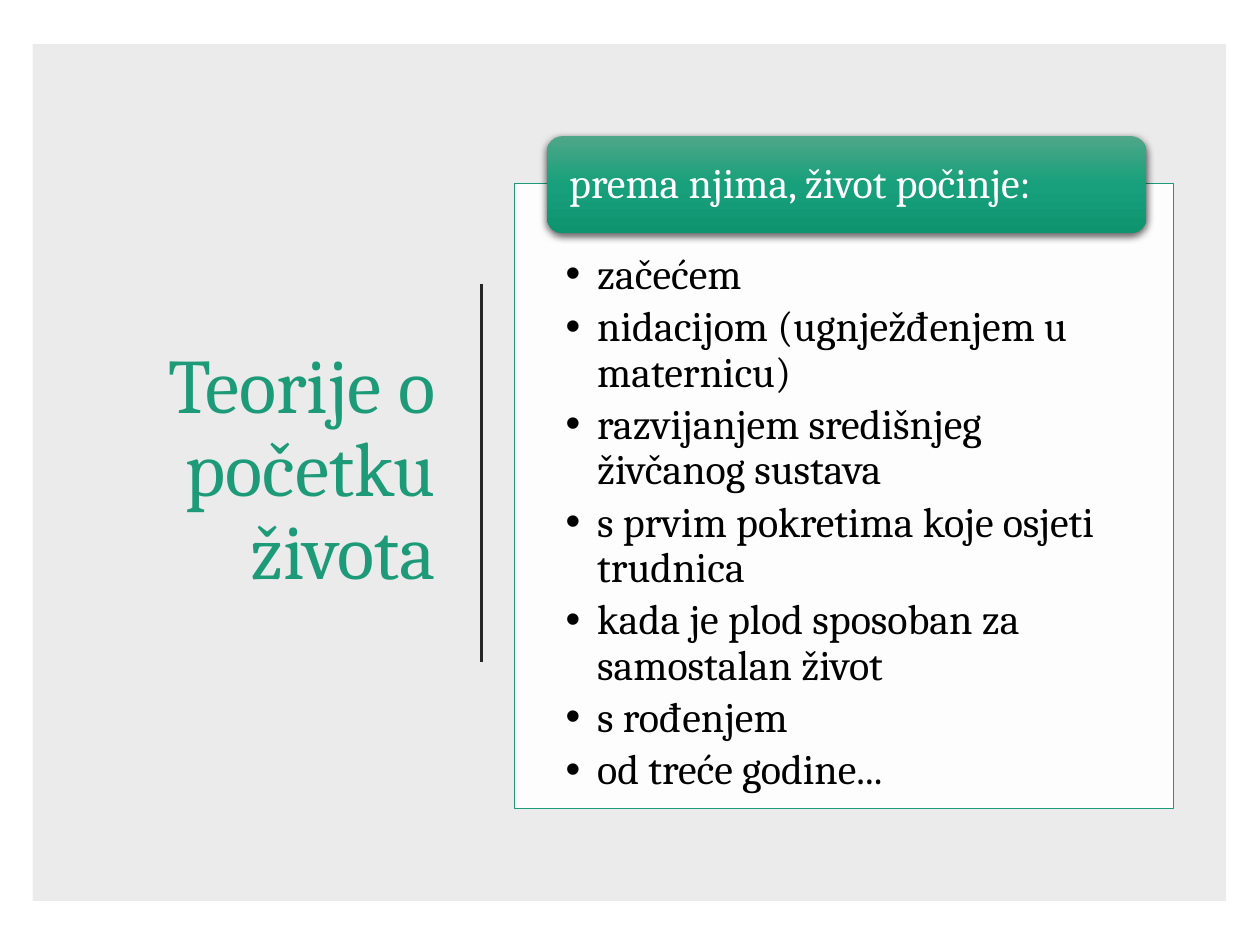
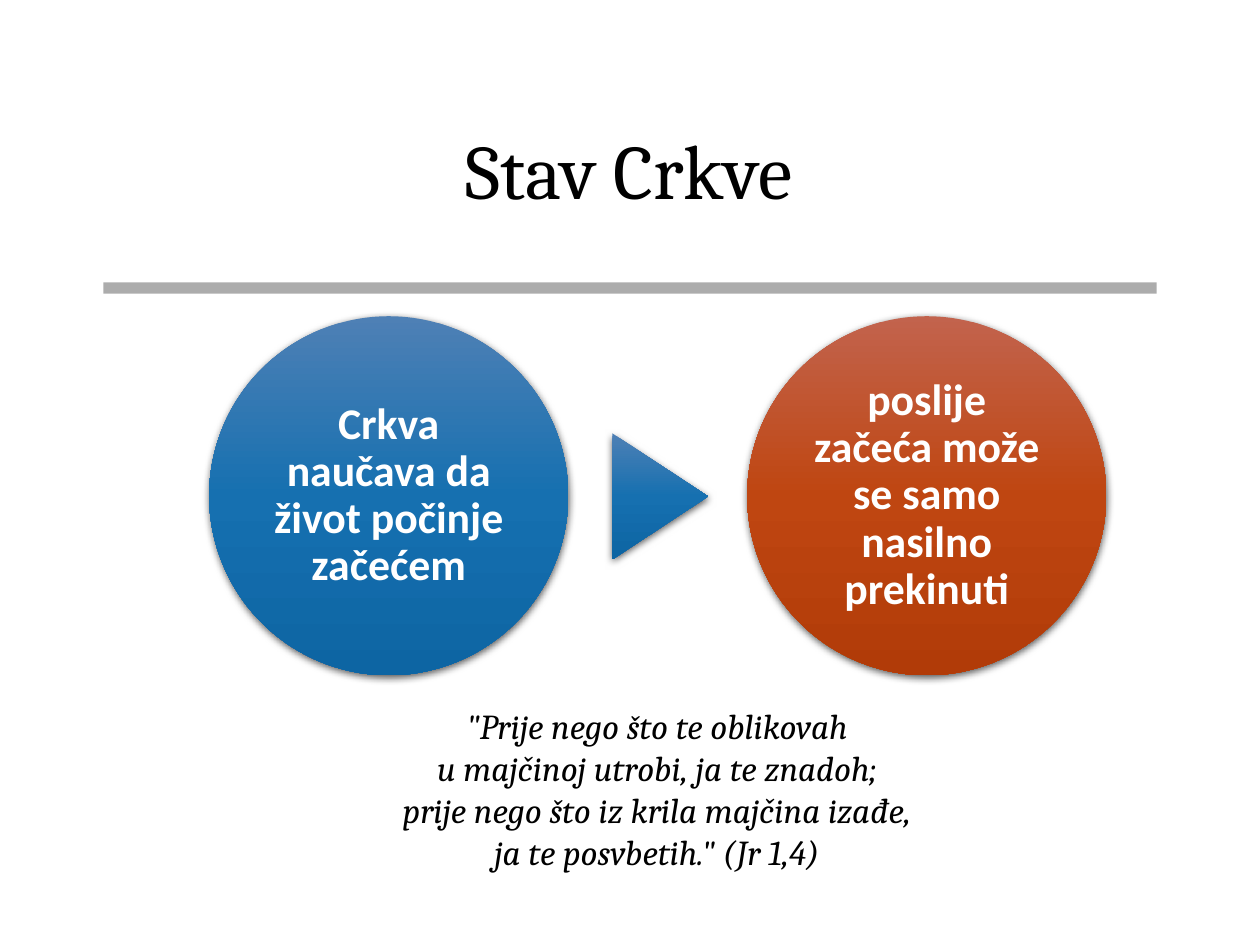
import pptx
import pptx.dml.color
import pptx.enum.shapes
import pptx.enum.text
import pptx.oxml.ns
import pptx.util
from lxml import etree

RGBColor = pptx.dml.color.RGBColor
Shape = pptx.enum.shapes.MSO_SHAPE
Align = pptx.enum.text.PP_ALIGN
Anchor = pptx.enum.text.MSO_ANCHOR
qn = pptx.oxml.ns.qn
Pt = pptx.util.Pt

EMU_PER_PX = 9144  # 100 px to the inch

BLACK = RGBColor(0x00, 0x00, 0x00)
WHITE = RGBColor(0xFF, 0xFF, 0xFF)
GRAY = RGBColor(0x80, 0x80, 0x80)
DARK = RGBColor(0x26, 0x26, 0x26)
GREEN = RGBColor(0x1D, 0x9A, 0x78)
GREEN_SHADES = (RGBColor(0x4E, 0xA7, 0x88), RGBColor(0x17, 0xA0, 0x7B), RGBColor(0x0F, 0x94, 0x70))
BLUE_SHADES = (RGBColor(0x4E, 0x80, 0xB5), RGBColor(0x16, 0x70, 0xB0), RGBColor(0x0D, 0x65, 0xA3))
RED_SHADES = (RGBColor(0xC2, 0x63, 0x4D), RGBColor(0xBF, 0x46, 0x11), RGBColor(0xB1, 0x3B, 0x08))

SERIF = "Cambria"
SANS = "Calibri"
TITLE_AND_CONTENT, TITLE_ONLY = 1, 5

BEGINNINGS = [
    "začećem",
    "nidacijom (ugnježđenjem u maternicu)",
    "razvijanjem središnjeg živčanog sustava",
    "s prvim pokretima koje osjeti trudnica",
    "kada je plod sposoban za samostalan život",
    "s rođenjem",
    "od treće godine...",
]
QUOTE = [
    '"Prije nego što te oblikovah',
    "u majčinoj utrobi, ja te znadoh;",
    "prije nego što iz krila majčina izađe,",
    'ja te posvbetih." (Jr 1,4)',
]


def px(length):
    return pptx.util.Emu(length * EMU_PER_PX)


def add_xml(parent, tag, **attributes):
    return etree.SubElement(parent, qn(tag), {name: str(value) for name, value in attributes.items()})


class Deck:
    def __init__(self):
        self.presentation = pptx.Presentation()
        self.presentation.slide_width = px(1000)
        self.presentation.slide_height = px(750)
        self.slide = None

    def new_slide(self, layout):
        self.slide = self.presentation.slides.add_slide(self.presentation.slide_layouts[layout])

    def place(self, shape, box):
        shape.left, shape.top, shape.width, shape.height = map(px, box)

    def set_text(self, shape, lines, size, color=BLACK, font=SERIF, align=Align.LEFT, anchor=Anchor.MIDDLE,
                 insets=(10, 5, 10, 5), spacing=0.9, after=0, bold=False, italic=False):
        frame = shape.text_frame
        frame.word_wrap = True
        frame.auto_size = pptx.enum.text.MSO_AUTO_SIZE.NONE
        frame.vertical_anchor = anchor
        frame.margin_left, frame.margin_top, frame.margin_right, frame.margin_bottom = map(px, insets)
        for index, line in enumerate(lines):
            paragraph = frame.add_paragraph() if index else frame.paragraphs[0]
            paragraph.alignment = align
            paragraph.line_spacing = spacing
            paragraph.space_before = Pt(0)
            paragraph.space_after = Pt(after)
            run = paragraph.add_run()
            run.text = line
            run.font.name, run.font.size = font, Pt(size)
            run.font.bold, run.font.italic = bold, italic
            run.font.color.rgb = color

    def title(self, text, box, color, align):
        title = self.slide.shapes.title
        self.place(title, box)
        self.set_text(title, [text], 44, color, align=align)

    def fill(self, shape, color, opacity):
        shape.fill.solid()
        shape.fill.fore_color.rgb = color
        color_element = shape._element.spPr.find(qn("a:solidFill")).find(qn("a:srgbClr"))
        add_xml(color_element, "a:alpha", val=opacity * 1000)

    def bullets(self, lines, box):
        """Fill the body placeholder as a framed list."""
        body = self.slide.placeholders[1]
        self.place(body, box)
        self.fill(body, WHITE, 90)
        body.line.color.rgb = GREEN
        body.line.width = Pt(0.5)
        self.set_text(body, lines, 24, anchor=Anchor.TOP, insets=(41, 55, 41, 19), after=4)
        for paragraph in body.text_frame.paragraphs:
            properties = paragraph._p.get_or_add_pPr()
            properties.set("marL", str(px(25)))
            properties.set("indent", str(px(-25)))
            add_xml(properties, "a:buFont", typeface="Arial")
            add_xml(properties, "a:buChar", char="•")

    def shape(self, kind, box):
        shape = self.slide.shapes.add_shape(kind, *map(px, box))
        shape.line.fill.background()
        shape.shadow.inherit = False
        return shape

    def band(self, box, color, opacity):
        """Add a translucent rectangle behind everything else."""
        band = self.shape(Shape.RECTANGLE, box)
        self.fill(band, color, opacity)
        self.slide.shapes._spTree.insert(2, band._element)

    def glossy(self, kind, box, shades, rotation=0):
        """Add a shape with a top-down gradient and a soft shadow."""
        shape = self.shape(kind, box)
        shape.rotation = rotation
        shape.fill.gradient()
        shape.fill.gradient_angle = 270
        properties = shape._element.spPr
        gradient = properties.find(qn("a:gradFill"))
        gradient.set("rotWithShape", "0")
        stops = gradient.find(qn("a:gsLst"))
        for stop in list(stops):
            stops.remove(stop)
        for index, shade in enumerate(shades):
            add_xml(add_xml(stops, "a:gs", pos=index * 50000), "a:srgbClr", val=shade)
        shadow = add_xml(properties.find(qn("a:effectLst")), "a:outerShdw", blurRad=Pt(4.5), dist=Pt(1.5),
                         dir=5400000, algn="ctr", rotWithShape=0)
        add_xml(add_xml(shadow, "a:srgbClr", val=BLACK), "a:alpha", val=63000)
        return shape

    def line(self, start, end, color, width):
        line = self.slide.shapes.add_connector(
            pptx.enum.shapes.MSO_CONNECTOR.STRAIGHT, *map(px, start + end))
        line.line.color.rgb = color
        line.line.width = Pt(width)
        add_xml(line._element.spPr, "a:effectLst")

    def text_box(self, lines, box, size, **style):
        self.set_text(self.slide.shapes.add_textbox(*map(px, box)), lines, size, **style)


def build_theories(deck):
    deck.new_slide(TITLE_AND_CONTENT)
    deck.band((26, 35, 947, 680), BLACK, 8)
    deck.title("Teorije o početku života", (69, 105, 287, 539), GREEN, Align.RIGHT)
    deck.line((382, 225), (382, 525), DARK, 1.5)
    deck.bullets(BEGINNINGS, (408, 146, 523, 496))
    header = deck.glossy(Shape.ROUNDED_RECTANGLE, (434, 108, 476, 77), GREEN_SHADES)
    deck.set_text(header, ["prema njima, život počinje:"], 24, WHITE, insets=(14, 0, 14, 0))


def build_church_view(deck):
    deck.new_slide(TITLE_ONLY)
    deck.title("Stav Crkve", (71, 66, 857, 145), BLACK, Align.CENTER)
    deck.band((82, 224, 836, 9), GRAY, 65)
    circles = [
        (166, BLUE_SHADES, "Crkva naučava da život počinje začećem"),
        (593, RED_SHADES, "poslije začeća može se samo nasilno prekinuti"),
    ]
    for left, shades, text in circles:
        circle = deck.glossy(Shape.OVAL, (left, 251, 285, 285), shades)
        deck.set_text(circle, [text], 25, WHITE, SANS, Align.CENTER, insets=(3, 3, 3, 3), bold=True)
    deck.glossy(Shape.ISOSCELES_TRIANGLE, (474, 356, 100, 76), BLUE_SHADES, rotation=90)
    deck.text_box(QUOTE, (267, 554, 509, 145), 20, align=Align.CENTER, anchor=Anchor.TOP,
                  spacing=1.0, italic=True)


def main():
    deck = Deck()
    build_theories(deck)
    build_church_view(deck)
    deck.presentation.save("out.pptx")


if __name__ == "__main__":
    main()
